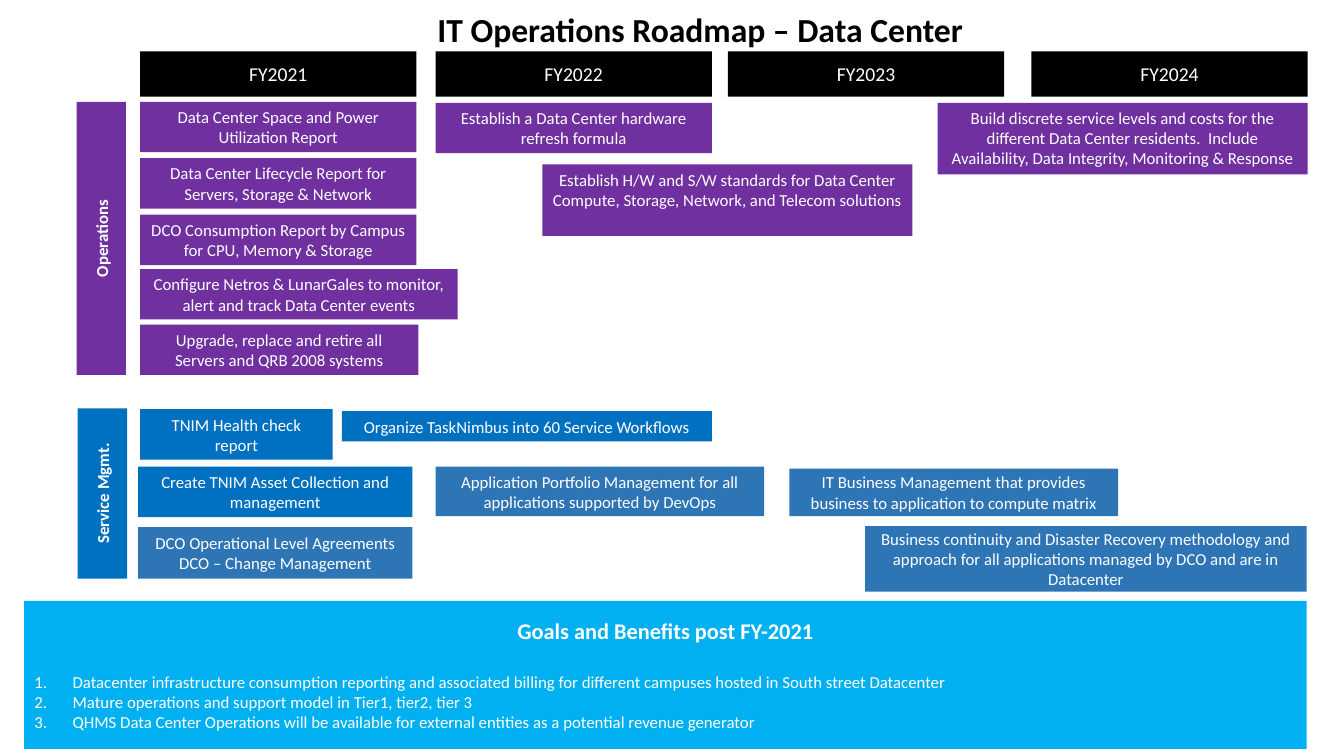
from lxml import etree
from pptx import Presentation
from pptx import util as u
from pptx.dml import color
from pptx.enum import shapes, text
from pptx.oxml import ns

BLACK, WHITE = "000000", "FFFFFF"
PURPLE, BLUE, STEEL, SKY = "7030A0", "0070C0", "2E75B6", "00B0F0"


def style_text(para, size, shade, bold=False, align=text.PP_ALIGN.CENTER):
    para.alignment = align
    para.space_before = u.Pt(0)
    for span in para.runs:
        span.font.name = "Calibri"
        span.font.size = u.Pt(size)
        span.font.bold = bold
        span.font.color.rgb = color.RGBColor.from_string(shade)


def add_bar(page, wording, place, fill, size=12, bold=False, anchor=text.MSO_ANCHOR.MIDDLE):
    left, top, width, height = [u.Inches(value) for value in place]
    box = page.shapes.add_shape(shapes.MSO_SHAPE.RECTANGLE, left, top, width, height)
    box.shadow.inherit = False
    box.fill.solid()
    box.fill.fore_color.rgb = color.RGBColor.from_string(fill)
    box.line.fill.background()
    box.text_frame.word_wrap = True
    box.text_frame.vertical_anchor = anchor
    box.text_frame.text = wording
    for para in box.text_frame.paragraphs:
        style_text(para, size, WHITE, bold)
    return box


deck = Presentation()
deck.slide_width = u.Inches(13.33)
deck.slide_height = u.Inches(7.5)
page = deck.slides.add_slide(deck.slide_layouts[1])

title = page.shapes.title
title.left, title.top = u.Inches(1.03), u.Inches(0.04)
title.width, title.height = u.Inches(11.83), u.Inches(0.5)
title.text_frame.text = "IT Operations Roadmap – Data Center"
title.text_frame.vertical_anchor = text.MSO_ANCHOR.TOP
title.text_frame.auto_size = text.MSO_AUTO_SIZE.NONE
style_text(title.text_frame.paragraphs[0], 24, BLACK, True)

for year, left in zip(range(2021, 2025), (1.39, 4.32, 7.22, 10.23)):
    add_bar(page, f"FY{year}", (left, 0.51, 2.74, 0.45), BLACK, 14)

lanes = [
    ("Operations", (-0.35, 2.12, 2.71, 0.49), PURPLE),
    ("Service Mgmt.", (0.17, 4.65, 1.69, 0.49), BLUE),
]
for wording, place, fill in lanes:
    add_bar(page, wording, place, fill, bold=True).rotation = 270

operations = [
    ("Data Center Space and Power Utilization Report", (1.39, 1.01, 2.74, 0.5)),
    ("Data Center Lifecycle Report for Servers, Storage & Network", (1.39, 1.57, 2.74, 0.5)),
    ("DCO Consumption Report by Campus for CPU, Memory & Storage", (1.39, 2.13, 2.74, 0.5)),
    ("Configure Netros & LunarGales to monitor, alert and track Data Center events",
     (1.39, 2.67, 3.15, 0.5)),
    ("Upgrade, replace and retire all Servers and QRB 2008 systems", (1.39, 3.22, 2.76, 0.5)),
    ("Establish a Data Center hardware refresh formula", (4.32, 1.02, 2.74, 0.5)),
    ("Establish H/W and S/W standards for Data Center Compute, Storage, Network, "
     "and Telecom solutions", (5.38, 1.63, 3.67, 0.71)),
    ("Build discrete service levels and costs for the different Data Center residents.  "
     "Include Availability, Data Integrity, Monitoring & Response", (9.3, 1.02, 3.67, 0.71)),
]
for wording, place in operations:
    add_bar(page, wording, place, PURPLE, anchor=text.MSO_ANCHOR.TOP)

services = [
    ("TNIM Health check report", (1.39, 4.06, 1.91, 0.5), BLUE),
    ("Organize TaskNimbus into 60 Service Workflows", (3.39, 4.08, 3.67, 0.3), BLUE),
    ("Create TNIM Asset Collection and management", (1.37, 4.63, 2.72, 0.5), BLUE),
    ("Application Portfolio Management for all applications supported by DevOps",
     (4.32, 4.63, 3.26, 0.49), STEEL),
    ("IT Business Management that provides business to application to compute matrix",
     (7.83, 4.65, 3.26, 0.47), STEEL),
    ("DCO Operational Level Agreements\nDCO – Change Management",
     (1.37, 5.23, 2.72, 0.51), STEEL),
    ("Business continuity and Disaster Recovery methodology and approach for all "
     "applications managed by DCO and are in Datacenter", (8.58, 5.22, 4.38, 0.65), STEEL),
]
for wording, place, fill in services:
    add_bar(page, wording, place, fill)

goals = page.placeholders[1]
goals.left, goals.top = u.Inches(0.24), u.Inches(5.96)
goals.width, goals.height = u.Inches(12.72), u.Inches(1.47)
goals.fill.solid()
goals.fill.fore_color.rgb = color.RGBColor.from_string(SKY)
goals.text_frame.auto_size = text.MSO_AUTO_SIZE.NONE
goals.text_frame.vertical_anchor = text.MSO_ANCHOR.MIDDLE
goals.text_frame.text = "\n".join([
    "Goals and Benefits post FY-2021",
    "Datacenter infrastructure consumption reporting and associated billing for different "
    "campuses hosted in South street Datacenter",
    "Mature operations and support model in Tier1, tier2, tier 3",
    "QHMS Data Center Operations will be available for external entities as a potential "
    "revenue generator",
])
heading, *benefits = goals.text_frame.paragraphs
style_text(heading, 16, WHITE, True)
heading.space_after = u.Pt(19.5)
properties = heading._p.get_or_add_pPr()
properties.set("marL", "0")
properties.set("indent", "0")
etree.SubElement(properties, ns.qn("a:buNone"))
for para in benefits:
    style_text(para, 12, WHITE, align=text.PP_ALIGN.LEFT)
    properties = para._p.get_or_add_pPr()
    properties.set("marL", str(u.Inches(0.38)))
    properties.set("indent", str(-u.Inches(0.38)))
    etree.SubElement(properties, ns.qn("a:buFont"), typeface="+mj-lt")
    etree.SubElement(properties, ns.qn("a:buAutoNum"), type="arabicPeriod")

deck.save("out.pptx")
